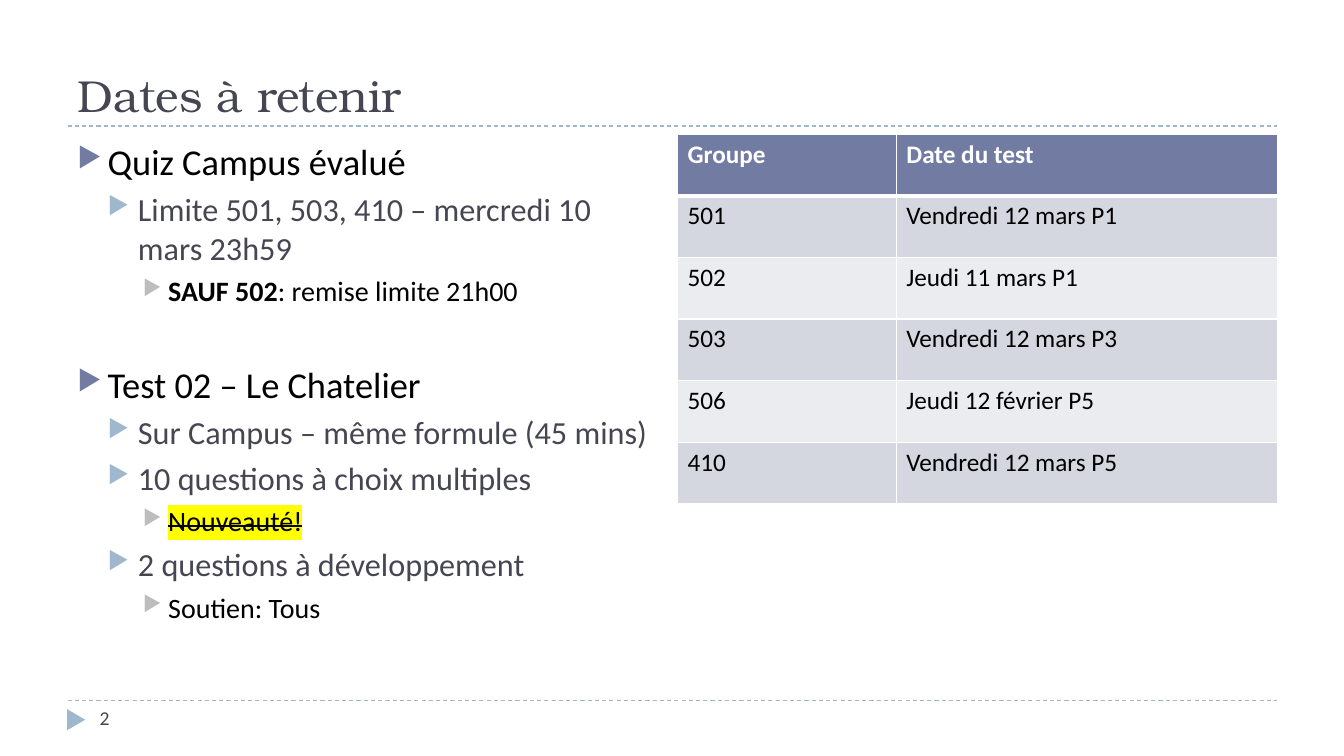
from dataclasses import dataclass

from lxml import etree
from pptx import Presentation
from pptx.dml.color import RGBColor
from pptx.enum.dml import MSO_LINE
from pptx.enum.shapes import MSO_CONNECTOR, MSO_SHAPE
from pptx.enum.text import MSO_ANCHOR
from pptx.oxml.ns import qn
from pptx.util import Inches, Pt

STRAIGHT = MSO_CONNECTOR.STRAIGHT
TRIANGLE = MSO_SHAPE.ISOSCELES_TRIANGLE
DASH = MSO_LINE.DASH
TOP, BOTTOM = MSO_ANCHOR.TOP, MSO_ANCHOR.BOTTOM


@dataclass(frozen=True)
class Theme:
    serif: str = "TeX Gyre Bonum"
    sans: str = "Calibri"
    ink: str = "000000"
    slate: str = "464653"
    indigo: str = "727CA3"
    sky: str = "9FB8CD"
    grey: str = "BDBDBD"
    white: str = "FFFFFF"
    marker: str = "FFFF00"
    bands: tuple = ("D5D7E0", "EBECF0")
    title_size: int = 32
    number_size: int = 14
    table_size: int = 18

    @property
    def levels(self):
        """Size, text colour, bullet colour, indent, hanging, space before."""
        return (
            (26, self.ink, self.indigo, 0.3, 0.3, 6),
            (23, self.slate, self.sky, 0.6, 0.3, 5),
            (20, self.ink, self.grey, 0.9, 0.25, 5),
        )


def rgb(value):
    return RGBColor.from_string(value)


def add_xml(parent, tag, **attrs):
    return etree.SubElement(parent, qn(tag), attrs)


class SlideBuilder:
    def __init__(self, s, theme):
        self.s = s
        self.theme = theme

    def run(self, p, text, size, color, font=None, bold=False, struck=False):
        r = p.add_run()
        r.text = text
        r.font.size = Pt(size)
        r.font.bold = bold
        r.font.color.rgb = rgb(color)
        if struck:
            rpr = r.font._element
            rpr.set("strike", "sngStrike")
            highlight = add_xml(rpr, "a:highlight")
            add_xml(highlight, "a:srgbClr", val=self.theme.marker)
        r.font.name = font or self.theme.sans

    def text_frame(self, x, y, w, h, anchor=TOP):
        box = self.s.shapes.add_textbox(Inches(x), Inches(y), Inches(w), Inches(h))
        tf = box.text_frame
        tf.word_wrap = True
        tf.vertical_anchor = anchor
        return tf

    def rule(self, x1, x2, y):
        line = self.s.shapes.add_connector(
            STRAIGHT, Inches(x1), Inches(y), Inches(x2), Inches(y))
        line.line.color.rgb = rgb(self.theme.sky)
        line.line.width = Pt(0.75)
        line.line.dash_style = DASH
        add_xml(line._element.spPr, "a:effectLst")

    def page_arrow(self, x, y, w, h):
        sp = self.s.shapes.add_shape(
            TRIANGLE, Inches(x), Inches(y), Inches(w), Inches(h))
        sp.rotation = 90
        sp.shadow.inherit = False
        sp.fill.solid()
        sp.fill.fore_color.rgb = rgb(self.theme.sky)
        sp.line.fill.background()

    def outline(self, x, y, w, h, items):
        tf = self.text_frame(x, y, w, h)
        for i, (level, runs, extra_space) in enumerate(items):
            p = tf.paragraphs[0] if i == 0 else tf.add_paragraph()
            size, color, bullet, indent, hanging, before = self.theme.levels[level]
            p.level = level
            p.space_before = Pt(before + extra_space)
            ppr = p._p.get_or_add_pPr()
            ppr.set("marL", str(Inches(indent)))
            ppr.set("indent", str(-Inches(hanging)))
            add_xml(add_xml(ppr, "a:buClr"), "a:srgbClr", val=bullet)
            add_xml(ppr, "a:buSzPct", val="76000")
            add_xml(ppr, "a:buChar", char="▶")
            for text, style in runs:
                self.run(p, text, size, color, **style)

    def borders(self, cell, top, bottom):
        tcpr = cell._tc.get_or_add_tcPr()
        for side, width in (("L", 1), ("R", 1), ("T", top), ("B", bottom)):
            ln = add_xml(tcpr, "a:ln" + side, w=str(Pt(width)))
            add_xml(add_xml(ln, "a:solidFill"), "a:srgbClr", val=self.theme.white)

    def table(self, x, y, col_widths, height, rows):
        t = self.theme
        table = self.s.shapes.add_table(
            len(rows), len(col_widths), Inches(x), Inches(y),
            Inches(sum(col_widths)), Inches(height)).table
        for column, width in zip(table.columns, col_widths):
            column.width = Inches(width)
        for i, values in enumerate(rows):
            header = i == 0
            fill = t.indigo if header else t.bands[(i - 1) % 2]
            for j, value in enumerate(values):
                cell = table.cell(i, j)
                # Thick rule between the header and the first group
                self.borders(cell, 3 if i == 1 else 1, 3 if header else 1)
                cell.fill.solid()
                cell.fill.fore_color.rgb = rgb(fill)
                self.run(cell.text_frame.paragraphs[0], value, t.table_size,
                         t.white if header else t.ink, bold=header)


OUTLINE = [  # level, runs, extra space before
    (0, [("Quiz Campus évalué", {})], 0),
    (1, [("Limite 501, 503, 410 – mercredi 10 mars 23h59", {})], 0),
    (2, [("SAUF 502", {"bold": True}), (": remise limite 21h00", {})], 0),
    (0, [("Test 02 – Le Chatelier", {})], 33),
    (1, [("Sur Campus – même formule (45 mins)", {})], 0),
    (1, [("10 questions à choix multiples", {})], 0),
    (2, [("Nouveauté!", {"struck": True})], 0),
    (1, [("2 questions à développement", {})], 0),
    (2, [("Soutien: Tous", {})], 0),
]

TEST_DATES = [
    ("Groupe", "Date du test"),
    ("501", "Vendredi 12 mars P1"),
    ("502", "Jeudi 11 mars P1"),
    ("503", "Vendredi 12 mars P3"),
    ("506", "Jeudi 12 février P5"),
    ("410", "Vendredi 12 mars P5"),
]


def main():
    prs = Presentation()
    prs.slide_width, prs.slide_height = Inches(13.33), Inches(7.5)
    theme = Theme()
    slide = SlideBuilder(prs.slides.add_slide(prs.slide_layouts[6]), theme)

    # Frame: dashed rules and page arrow
    for y in (6.95, 1.25):
        slide.rule(0.67, 12.67, y)
    slide.page_arrow(0.65, 7.05, 0.21, 0.18)

    # Title and page number
    tf = slide.text_frame(0.67, 0.17, 12, 1.08, BOTTOM)
    slide.run(tf.paragraphs[0], "Dates à retenir", theme.title_size,
              theme.slate, theme.serif)
    tf = slide.text_frame(0.89, 6.95, 2.89, 0.4)
    slide.run(tf.paragraphs[0], "2", theme.number_size, theme.slate)

    # Outline on the left, test dates on the right
    slide.outline(0.67, 1.33, 5.94, 5.4, OUTLINE)
    slide.table(6.72, 1.33, (2.17, 3.78), 3.67, TEST_DATES)

    prs.save("out.pptx")


if __name__ == "__main__":
    main()
